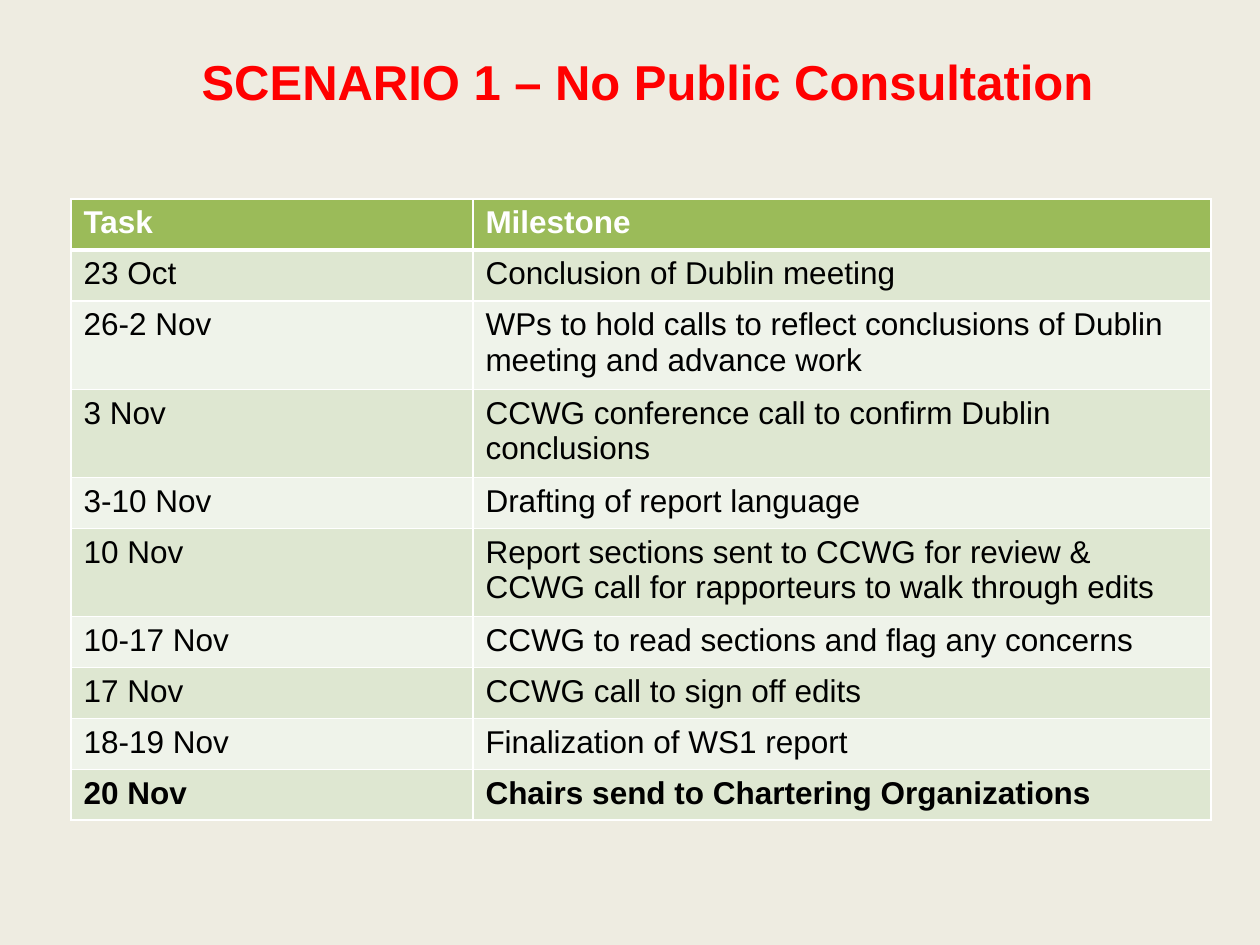
from pptx import Presentation
from pptx.dml.color import RGBColor
from pptx.enum.text import PP_ALIGN
from pptx.oxml import parse_xml
from pptx.oxml.ns import nsdecls
from pptx.util import Emu, Pt

ROWS = [
    ("Task", "Milestone"),
    ("23 Oct", "Conclusion of Dublin meeting"),
    ("26-2 Nov", "WPs to hold calls to reflect conclusions of Dublin meeting and advance work"),
    ("3 Nov", "CCWG conference call to confirm Dublin conclusions"),
    ("3-10 Nov", "Drafting of report language"),
    ("10 Nov", "Report sections sent to CCWG for review & CCWG call for rapporteurs to walk through edits"),
    ("10-17 Nov", "CCWG to read sections and flag any concerns"),
    ("17 Nov", "CCWG call to sign off edits"),
    ("18-19 Nov", "Finalization of WS1 report"),
    ("20 Nov", "Chairs send to Chartering Organizations"),
]
HEIGHTS = [51, 51, 83, 83, 51, 83, 51, 51, 51, 48]
WIDTHS = [402, 738]


def px(n):
    return Emu(round(n * 914400 / 126))


def paint(item, color):
    item.solid()
    item.fore_color.rgb = RGBColor.from_string(color)


def style(para, size, color, bold):
    font = para.font
    font.name = "Arial"
    font.size = Pt(size)
    font.bold = bold
    paint(font.fill, color)


def edge(cell, side, width):
    return parse_xml(
        f'<a:ln{side} {nsdecls("a")} w="{Pt(width)}"><a:solidFill>'
        f'<a:srgbClr val="FFFFFF"/></a:solidFill></a:ln{side}>'
    )


def border(cell, head, below):
    props = cell._tc.get_or_add_tcPr()
    widths = {"L": 1, "R": 1, "T": 3 if below else 1, "B": 3 if head else 1}
    for spot, (side, width) in enumerate(widths.items()):
        props.insert(spot, edge(cell, side, width))


def title(slide, left, top, width, height):
    box = slide.shapes.add_textbox(px(left), px(top), px(width), px(height))
    frame = box.text_frame
    frame.word_wrap = True
    frame.margin_top = px(12)
    frame.text = "SCENARIO 1 – No Public Consultation"
    para = frame.paragraphs[0]
    para.alignment = PP_ALIGN.CENTER
    style(para, 28, "FF0000", True)


def table(slide, left, top):
    grid = slide.shapes.add_table(
        len(ROWS), len(WIDTHS), px(left), px(top), px(sum(WIDTHS)), px(sum(HEIGHTS))
    ).table
    for col, width in zip(grid.columns, WIDTHS):
        col.width = px(width)
    for i, (row, height) in enumerate(zip(grid.rows, HEIGHTS)):
        row.height = px(height)
        head = i == 0
        fill = "9BBB59" if head else ("EFF3EA", "DEE7D1")[i % 2]
        for cell, text in zip(row.cells, ROWS[i]):
            cell.text = text
            style(
                cell.text_frame.paragraphs[0],
                18,
                "FFFFFF" if head else "000000",
                head or i == len(ROWS) - 1,
            )
            paint(cell.fill, fill)
            border(cell, head, i == 1)


def main():
    deck = Presentation()
    deck.slide_width, deck.slide_height = px(1260), px(945)
    slide = deck.slides.add_slide(deck.slide_layouts[6])
    paint(slide.background.fill, "EEECE1")
    title(slide, 159, 39, 977, 108)
    table(slide, 71, 199)
    deck.save("out.pptx")


if __name__ == "__main__":
    main()
